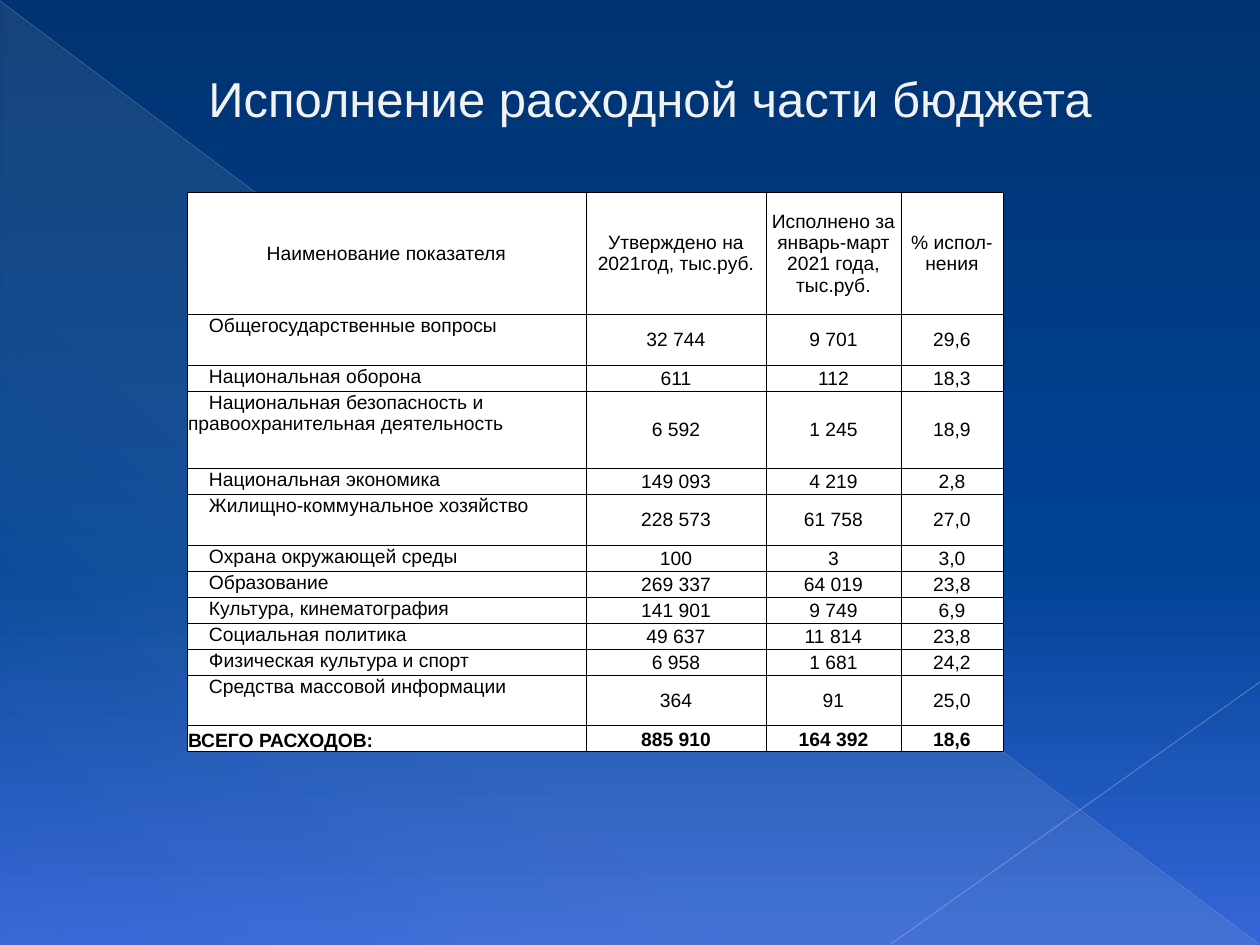
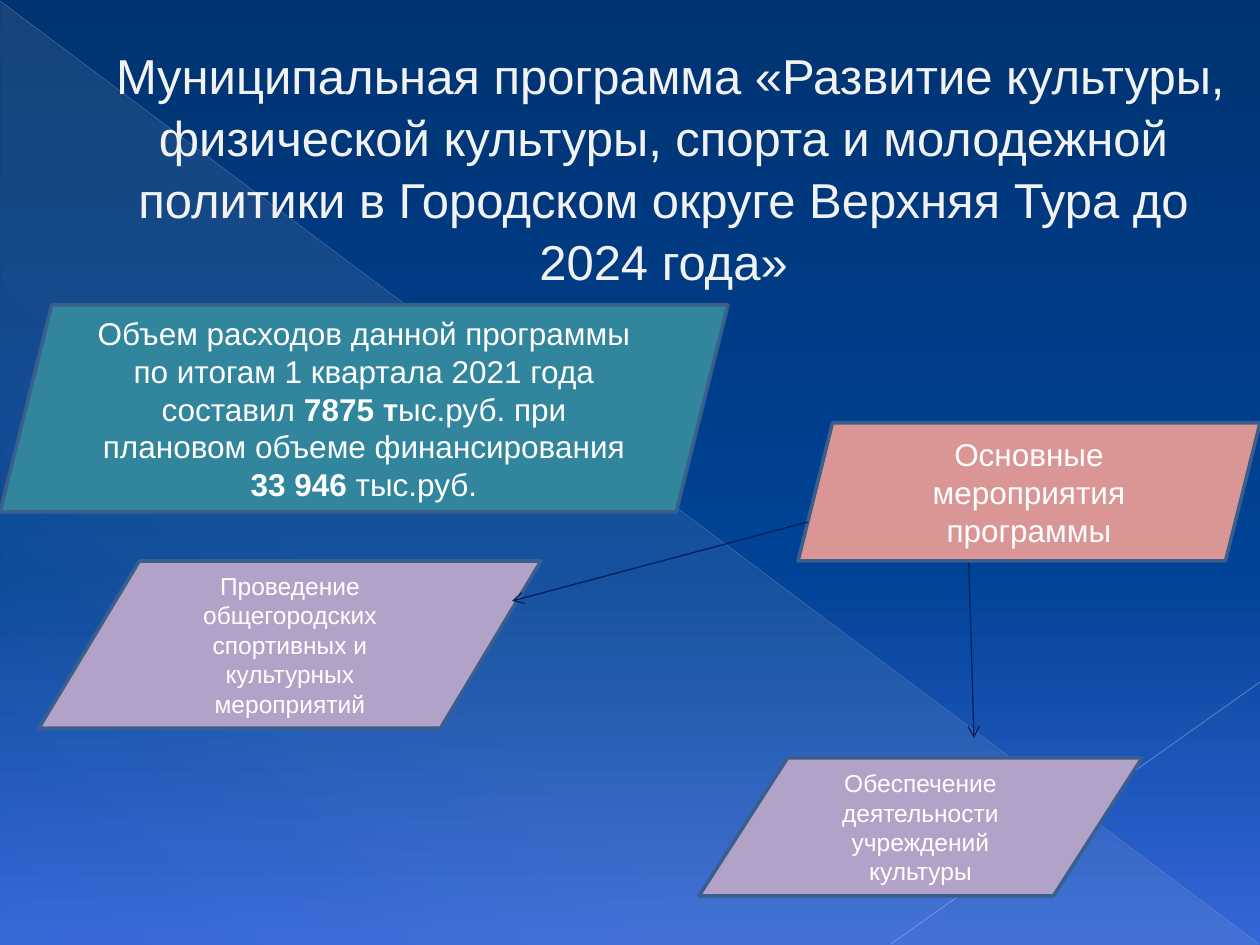
from lxml.etree import SubElement
from pptx import Presentation
from pptx.dml.color import RGBColor
from pptx.enum.shapes import MSO_CONNECTOR, MSO_SHAPE
from pptx.enum.text import MSO_ANCHOR, PP_ALIGN
from pptx.oxml.ns import qn
from pptx.util import Pt

PX = 914400 / 126
FONT = "Arial"
WHITE, BLACK, PALE = "FFFFFF", "000000", "F2F2F2"
NAVY, EDGE, CREAM = "002060", "3A5F8C", "EEECE1"
TEAL, ROSE, LILAC = "31859C", "D99694", "B3A2C7"
SKY = [(0, "003371", 100), (60, "004396", 100), (100, "3566D7", 100)]
HAZE = [(0, CREAM, 10), (70, CREAM, 8), (100, CREAM, 1)]

COLS = [399, 180, 135, 102]
HEAD = ["Наименование показателя", "Утверждено на 2021год, тыс.руб.",
        "Исполнено за январь-март 2021 года, тыс.руб.", "% испол-нения"]
# Row height, then the cells
ROWS = [
    (122, *HEAD),
    (51, "Общегосударственные вопросы", "32 744", "9 701", "29,6"),
    (26, "Национальная оборона", "611", "112", "18,3"),
    (77, "Национальная безопасность и правоохранительная деятельность",
     "6 592", "1 245", "18,9"),
    (26, "Национальная экономика", "149 093", "4 219", "2,8"),
    (51, "Жилищно-коммунальное хозяйство", "228 573", "61 758", "27,0"),
    (26, "Охрана окружающей среды", "100", "3", "3,0"),
    (26, "Образование", "269 337", "64 019", "23,8"),
    (26, "Культура, кинематография", "141 901", "9 749", "6,9"),
    (26, "Социальная политика", "49 637", "11 814", "23,8"),
    (26, "Физическая культура и спорт", "6 958", "1 681", "24,2"),
    (51, "Средства массовой информации", "364", "91", "25,0"),
    (26, "ВСЕГО РАСХОДОВ:", "885 910", "164 392", "18,6"),
]


def px(*vals):
    return [round(v * PX) for v in vals]


def rgb(code):
    return RGBColor.from_string(code)


def style(para, size, color, align=PP_ALIGN.CENTER, bold=None):
    para.alignment = align
    font = para.font
    font.name, font.size, font.bold = FONT, Pt(size), bold
    font.color.rgb = rgb(color)


def fade(clr, alpha):
    if alpha < 100:
        SubElement(clr, qn("a:alpha"), val=str(alpha * 1000))


def blend(fill, root, stops, angle):
    """Fill with a gradient of (place, colour, opacity) stops."""
    fill.gradient()
    grad = root.find(".//" + qn("a:gradFill"))
    for child in list(grad):
        grad.remove(child)
    group = SubElement(grad, qn("a:gsLst"))
    for pos, code, alpha in stops:
        stop = SubElement(group, qn("a:gs"), pos=str(pos * 1000))
        fade(SubElement(stop, qn("a:srgbClr"), val=code), alpha)
    SubElement(grad, qn("a:lin"), ang=str(angle * 60000), scaled="0")


def add_line(slide, start, end, color, width, alpha=100, arrow=False):
    line = slide.shapes.add_connector(
        MSO_CONNECTOR.STRAIGHT, *px(*start, *end))
    line.line.color.rgb = rgb(color)
    line.line.width = Pt(width)
    props = line.element.spPr
    fade(props.find(".//" + qn("a:srgbClr")), alpha)
    if arrow:
        SubElement(props.find(qn("a:ln")), qn("a:tailEnd"), type="arrow")
    SubElement(props, qn("a:effectLst"))


def add_page(deck):
    """Start a slide with the shared backdrop."""
    slide = deck.slides.add_slide(deck.slide_layouts[6])
    blend(slide.background.fill, slide.element, SKY, 90)
    haze = slide.shapes.add_shape(
        MSO_SHAPE.RIGHT_TRIANGLE, *px(1, 2, 1258, 943))
    haze.shadow.inherit = False
    haze.line.fill.background()
    blend(haze.fill, haze.element, HAZE, 133)
    add_line(slide, (0, 1), (1259, 944), "ADB6CE", 0.39, 35)
    add_line(slide, (1260, 682), (891, 944), "B6BED3", 0.47, 45)
    return slide


def add_title(slide, box, text, indent):
    frame = slide.shapes.add_textbox(*px(*box)).text_frame
    frame.word_wrap = True
    frame.vertical_anchor = MSO_ANCHOR.MIDDLE
    para = frame.paragraphs[0]
    para.text = text
    style(para, 28, PALE)
    para._p.get_or_add_pPr().set("marL", str(px(indent)[0]))
    return para


def add_block(slide, kind, box, fill, size, parts):
    """Add a slanted block; every second text part is bold."""
    block = slide.shapes.add_shape(kind, *px(*box))
    block.shadow.inherit = False
    block.fill.solid()
    block.fill.fore_color.rgb = rgb(fill)
    block.line.color.rgb = rgb(EDGE)
    block.line.width = Pt(2)
    frame = block.text_frame
    frame.word_wrap = True
    frame.vertical_anchor = MSO_ANCHOR.MIDDLE
    para = frame.paragraphs[0]
    style(para, size, WHITE)
    for i, part in enumerate(parts):
        run = para.add_run()
        run.text = part
        if i % 2:
            run.font.bold = True


def fill_cell(cell, text, head, total, first):
    # Borders go before the fill
    props = cell._tc.get_or_add_tcPr()
    for side in ("lnL", "lnR", "lnT", "lnB"):
        edge = SubElement(props, qn("a:" + side), w=str(Pt(0.5)))
        paint = SubElement(edge, qn("a:solidFill"))
        SubElement(paint, qn("a:srgbClr"), val=BLACK)
    cell.fill.solid()
    cell.fill.fore_color.rgb = rgb(WHITE)
    cell.margin_left = cell.margin_right = cell.margin_top = px(1)[0]
    cell.margin_bottom = 0
    cell.text = text
    para = cell.text_frame.paragraphs[0]
    label = first and not head
    style(para, 11, BLACK, PP_ALIGN.LEFT if label else PP_ALIGN.CENTER, total)
    cell.vertical_anchor = MSO_ANCHOR.MIDDLE
    if label:
        cell.vertical_anchor = MSO_ANCHOR.BOTTOM if total else MSO_ANCHOR.TOP
        if not total:
            para._p.get_or_add_pPr().set("indent", str(px(21)[0]))


def add_grid(slide, left, top):
    high = sum(row[0] for row in ROWS)
    table = slide.shapes.add_table(
        len(ROWS), len(COLS), *px(left, top, sum(COLS), high)).table
    table.first_row = table.horz_banding = False
    for col, wide in zip(table.columns, COLS):
        col.width = px(wide)[0]
    for r, (tall, *texts) in enumerate(ROWS):
        table.rows[r].height = px(tall)[0]
        for c, text in enumerate(texts):
            fill_cell(table.cell(r, c), text, r == 0,
                      r == len(ROWS) - 1, c == 0)


def add_budget(deck):
    slide = add_page(deck)
    add_title(slide, (63, 37, 1134, 121), "Исполнение расходной части бюджета", 40)
    add_grid(slide, 187, 192)


def add_plan(deck):
    slide = add_page(deck)
    add_line(slide, (965, 433), (974, 738), NAVY, 0.75, arrow=True)
    para = add_title(
        slide, (0, 38, 1260, 257),
        " Муниципальная программа «Развитие культуры, физической культуры, "
        "спорта и молодежной политики в Городском округе Верхняя Тура "
        "до 2024 года»", 67)
    para.line_spacing = 1.05
    # Spending and main activities
    slant, flow = MSO_SHAPE.PARALLELOGRAM, MSO_SHAPE.FLOWCHART_DATA
    add_block(slide, slant, (0, 305, 728, 207), TEAL, 18, [
        "Объем расходов данной программы по итогам 1 квартала 2021 года "
        "составил ", "7875 т", "ыс.руб. при плановом объеме финансирования ",
        "33 946 ", "тыс.руб."])
    add_block(slide, slant, (798, 423, 462, 138), ROSE, 18,
              ["Основные мероприятия программы"])
    add_block(slide, flow, (39, 561, 502, 167), LILAC, 14,
              ["Проведение общегородских спортивных и культурных мероприятий"])
    add_block(slide, flow, (699, 758, 443, 138), LILAC, 14,
              ["Обеспечение деятельности учреждений культуры"])
    add_line(slide, (808, 522), (512, 601), NAVY, 0.75, arrow=True)


def main():
    deck = Presentation()
    deck.slide_width, deck.slide_height = px(1260, 945)
    add_budget(deck)
    add_plan(deck)
    deck.save("out.pptx")


if __name__ == "__main__":
    main()
